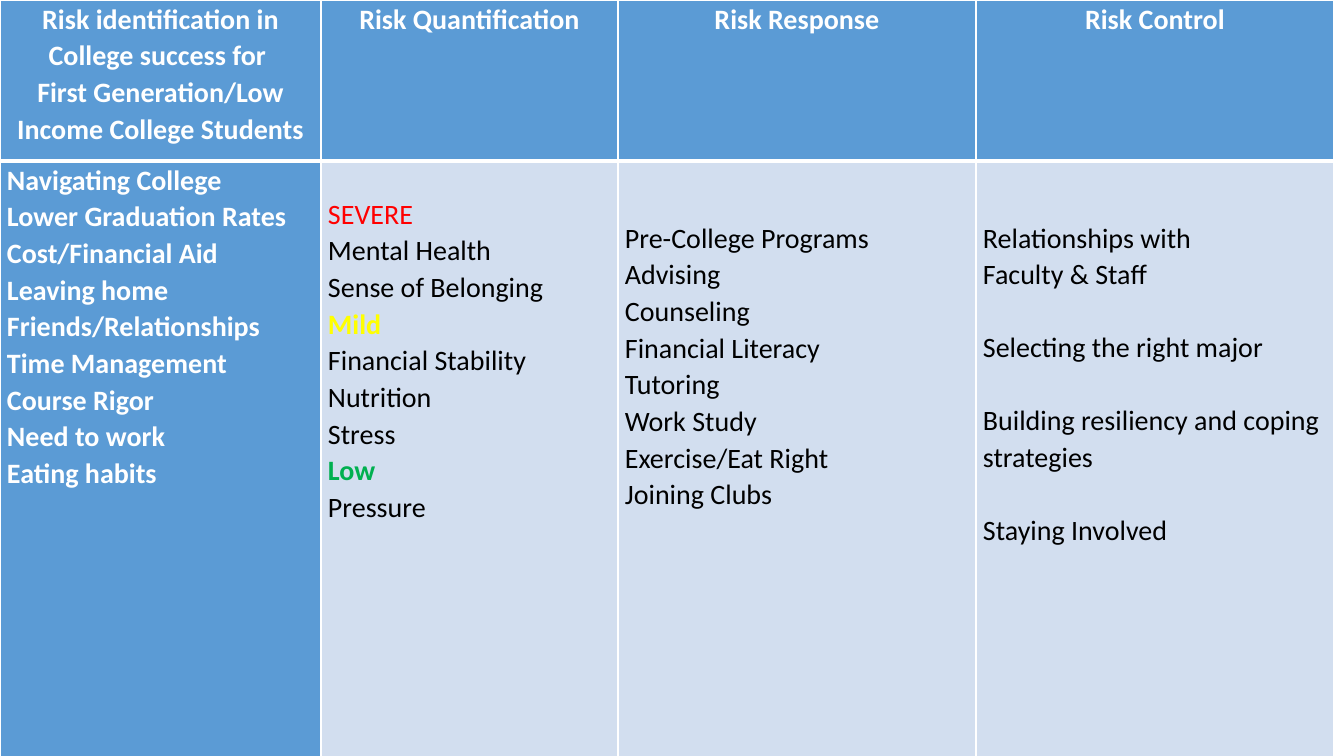
from pptx import Presentation
from pptx.dml.color import RGBColor
from pptx.enum.text import MSO_ANCHOR, PP_ALIGN
from pptx.oxml import parse_xml
from pptx.oxml.ns import nsdecls
from pptx.util import Pt

PX = 9071.43  # EMU per px


def px(length):
    return round(length * PX)


THEME = {
    "font": "Calibri", "size": Pt(20), "line_spacing": 1.07, "gap": Pt(26),
    "blue": "5B9BD5", "pale": "D2DEEF", "white": "FFFFFF", "black": "000000",
    "severe": "FF0000", "mild": "FFFF00", "low": "00B050",
}
LEVELS = {"SEVERE": ("severe", False), "Mild": ("mild", True), "Low": ("low", True)}

# Content: each column has its header lines, body lines and body top margin
COLUMNS = [
    (321, ["Risk identification in College success for ",
           "First Generation/Low Income College Students"], 0,
     ["Navigating College", "Lower Graduation Rates", "Cost/Financial Aid",
      "Leaving home", "Friends/Relationships", "Time Management",
      "Course Rigor", "Need to work", "Eating habits"]),
    (297, ["Risk Quantification"], 34,
     ["SEVERE", "Mental Health", "Sense of Belonging", "Mild",
      "Financial Stability", "Nutrition", "Stress", "Low", "Pressure"]),
    (358, ["Risk Response"], 58,
     ["Pre-College Programs", "Advising", "Counseling", "Financial Literacy",
      "Tutoring", "Work Study", "Exercise/Eat Right", "Joining Clubs"]),
    (358, ["Risk Control"], 58,
     ["Relationships with", "Faculty & Staff", "Selecting the right major",
      "Building resiliency and coping strategies", "Staying Involved"]),
]
SPACED_LINES = COLUMNS[3][3][2:]
ROW_HEIGHTS = [161, 602]

# Slide
presentation = Presentation()
presentation.slide_width, presentation.slide_height = px(1344), px(756)
slide = presentation.slides.add_slide(presentation.slide_layouts[6])

# Table
table = slide.shapes.add_table(
    2, len(COLUMNS), 0, 0,
    px(sum(column[0] for column in COLUMNS)), px(sum(ROW_HEIGHTS))).table
table.horz_banding = False
for row, height in zip(table.rows, ROW_HEIGHTS):
    row.height = px(height)

for column_index, (width, header, top, body) in enumerate(COLUMNS):
    table.columns[column_index].width = px(width)
    for row_index, lines in enumerate([header, body]):
        is_header = row_index == 0
        is_blue = is_header or column_index == 0
        cell = table.cell(row_index, column_index)

        # Margins and text
        cell.margin_left = cell.margin_right = px(7)
        cell.margin_top, cell.margin_bottom = px(0 if is_header else top), 0
        cell.vertical_anchor = MSO_ANCHOR.TOP
        cell.text = "\n".join(lines)
        for paragraph in cell.text_frame.paragraphs:
            paragraph.line_spacing = THEME["line_spacing"]
            paragraph.font.name = THEME["font"]
            paragraph.font.size = THEME["size"]
            if is_blue:
                paragraph.alignment = PP_ALIGN.CENTER if is_header else PP_ALIGN.JUSTIFY
            if paragraph.text in SPACED_LINES:
                paragraph.space_before = THEME["gap"]
            default = ("white", True) if is_blue else ("black", False)
            color, bold = LEVELS.get(paragraph.text, default)
            for run in paragraph.runs:
                run.font.bold = bold
                run.font.color.rgb = RGBColor.from_string(THEME[color])

        # White borders, thicker under the header
        properties = cell._tc.get_or_add_tcPr()
        thick_side = "lnB" if is_header else "lnT"
        for side in ("lnL", "lnR", "lnT", "lnB"):
            line_width = Pt(3 if side == thick_side else 1)
            properties.append(parse_xml(
                f'<a:{side} {nsdecls("a")} w="{line_width}"><a:solidFill>'
                f'<a:srgbClr val="{THEME["white"]}"/></a:solidFill></a:{side}>'))
        cell.fill.solid()
        cell.fill.fore_color.rgb = RGBColor.from_string(THEME["blue" if is_blue else "pale"])

presentation.save("out.pptx")
